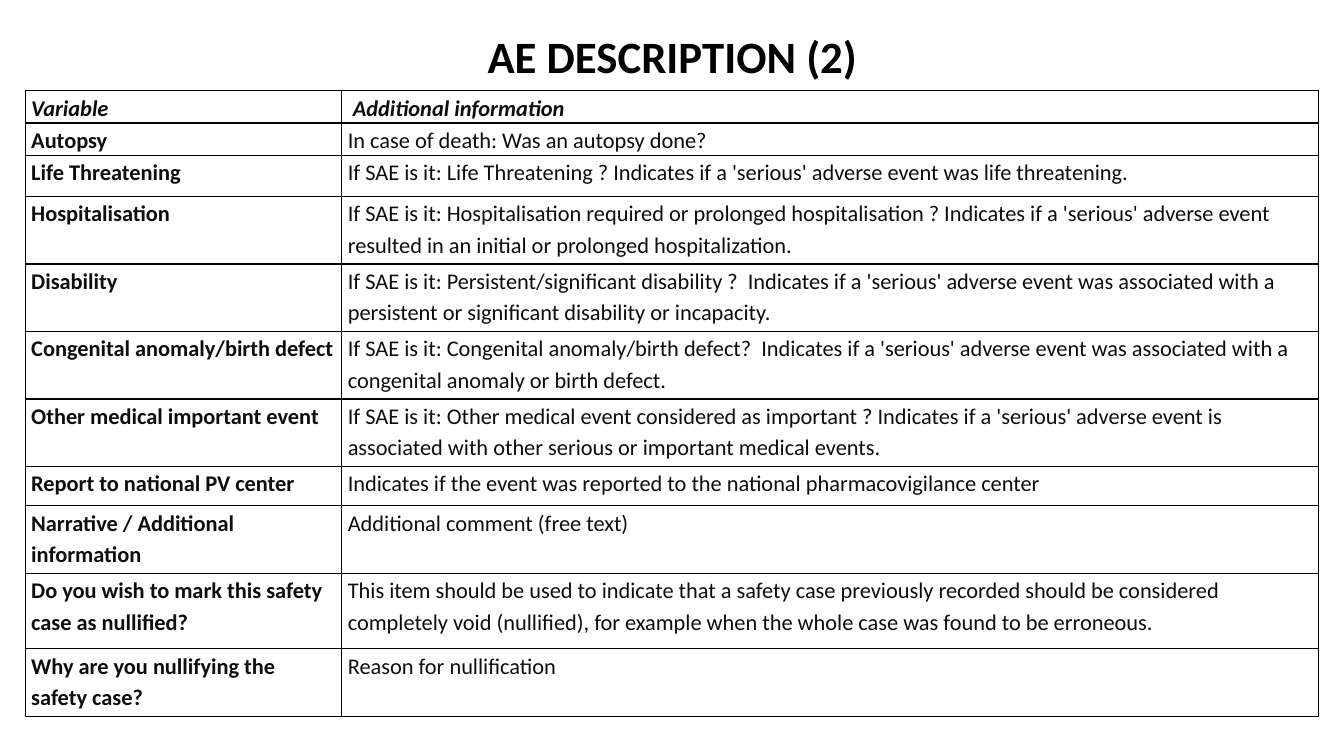
from lxml import etree
from pptx import Presentation
from pptx import util as u
from pptx.dml.color import RGBColor
from pptx.enum import text
from pptx.oxml import ns

THEME = {
    "font": "Calibri",
    "title_size": 32,
    "body_size": 16,
    "title": "000000",
    "body": "0D0D0D",
    "paper": "FFFFFF",
    "border": "000000",
    "border_width": u.Pt(1),
}


def write(frame, words, size=THEME["body_size"], color=THEME["body"], bold=False,
          italic=False, align=text.PP_ALIGN.LEFT, spacing=1.0):
    paragraph = frame.paragraphs[0]
    paragraph.alignment = align
    paragraph.line_spacing = spacing
    run = paragraph.add_run()
    run.text = words
    run.font.name = THEME["font"]
    run.font.size = u.Pt(size)
    run.font.bold = bold
    run.font.italic = italic
    run.font.color.rgb = RGBColor.from_string(color)


def add_borders(cell):
    properties = cell._tc.get_or_add_tcPr()
    for position, side in enumerate(("a:lnL", "a:lnR", "a:lnT", "a:lnB")):
        line = etree.Element(ns.qn(side), w=str(THEME["border_width"]))
        fill = etree.SubElement(line, ns.qn("a:solidFill"))
        etree.SubElement(fill, ns.qn("a:srgbClr"), val=THEME["border"])
        properties.insert(position, line)


variables = [
    ("Variable", " Additional information", 0.32),
    ("Autopsy", "In case of death: Was an autopsy done?", 0.32),
    ("Life Threatening",
     "If SAE is it: Life Threatening ? Indicates if a 'serious' adverse event "
     "was life threatening.", 0.41),
    ("Hospitalisation",
     "If SAE is it: Hospitalisation required or prolonged hospitalisation ? Indicates if a "
     "'serious' adverse event resulted in an initial or prolonged hospitalization.", 0.67),
    ("Disability",
     "If SAE is it: Persistent/significant disability ?  Indicates if a 'serious' adverse event "
     "was associated with a persistent or significant disability or incapacity.", 0.67),
    ("Congenital anomaly/birth defect",
     "If SAE is it: Congenital anomaly/birth defect?  Indicates if a 'serious' adverse event "
     "was associated with a congenital anomaly or birth defect.", 0.67),
    ("Other medical important event",
     "If SAE is it: Other medical event considered as important ? Indicates if a 'serious' "
     "adverse event is associated with other serious or important medical events.", 0.67),
    ("Report to national PV center",
     "Indicates if the event was reported to the national pharmacovigilance center", 0.39),
    ("Narrative / Additional information", "Additional comment (free text)", 0.67),
    ("Do you wish to mark this safety case as nullified?",
     "This item should be used to indicate that a safety case previously recorded should be "
     "considered completely void (nullified), for example when the whole case was found to be "
     "erroneous.", 0.75),
    ("Why are you nullifying the safety case?", "Reason for nullification", 0.67),
]
column_widths = (3.14, 9.69)

deck = Presentation()
deck.slide_width, deck.slide_height = u.Inches(13.33), u.Inches(7.5)
slide = deck.slides.add_slide(deck.slide_layouts[6])

# Heading
heading = slide.shapes.add_textbox(
    u.Inches(2.17), u.Inches(0.21), u.Inches(9), u.Inches(0.69)).text_frame
heading.word_wrap = True
heading.vertical_anchor = text.MSO_ANCHOR.MIDDLE
write(heading, "AE DESCRIPTION (2)", size=THEME["title_size"], color=THEME["title"],
      bold=True, align=text.PP_ALIGN.CENTER)

# Table grid
description = slide.shapes.add_table(
    len(variables), len(column_widths), u.Inches(0.25), u.Inches(0.9),
    u.Inches(sum(column_widths)), u.Inches(sum(row[-1] for row in variables))).table
description.first_row = description.horz_banding = False
for column, width in zip(description.columns, column_widths):
    column.width = u.Inches(width)

# Table cells: the header row and the first column are bold
for row_index, (variable, information, height) in enumerate(variables):
    description.rows[row_index].height = u.Inches(height)
    is_header = row_index == 0
    for column_index, words in enumerate((variable, information)):
        cell = description.cell(row_index, column_index)
        cell.margin_left = cell.margin_right = u.Inches(0.06)
        cell.margin_top = cell.margin_bottom = 0
        cell.vertical_anchor = text.MSO_ANCHOR.MIDDLE if is_header else text.MSO_ANCHOR.TOP
        cell.fill.solid()
        cell.fill.fore_color.rgb = RGBColor.from_string(THEME["paper"])
        add_borders(cell)
        write(cell.text_frame, words, bold=is_header or column_index == 0,
              italic=is_header, spacing=1.15)

deck.save("out.pptx")
